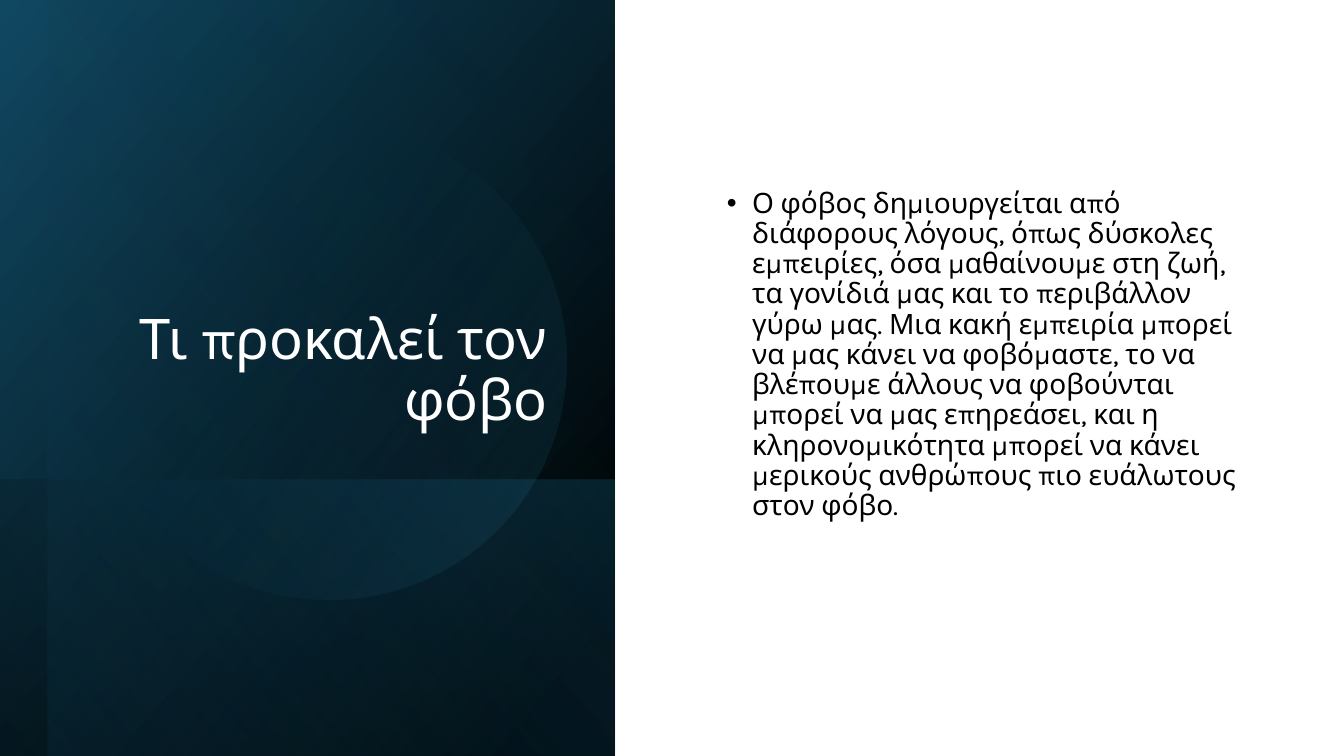
from pptx import Presentation
from pptx.dml.color import RGBColor
from pptx.enum.shapes import MSO_SHAPE
from pptx.enum.text import MSO_ANCHOR, MSO_AUTO_SIZE, PP_ALIGN
from pptx.oxml import parse_xml
from pptx.oxml.ns import nsdecls, qn
from pptx.util import Inches, Pt

RECT, OVAL = MSO_SHAPE.RECTANGLE, MSO_SHAPE.OVAL
TOP, MIDDLE, BOTTOM = MSO_ANCHOR.TOP, MSO_ANCHOR.MIDDLE, MSO_ANCHOR.BOTTOM
LEFT, RIGHT = PP_ALIGN.LEFT, PP_ALIGN.RIGHT
NO_AUTOFIT = MSO_AUTO_SIZE.NONE
FONT = "Karla"

TITLE = "Τι προκαλεί τον φόβο"
BODY = (
    "Ο φόβος δημιουργείται από διάφορους λόγους, όπως δύσκολες εμπειρίες, "
    "όσα μαθαίνουμε στη ζωή, τα γονίδιά μας και το περιβάλλον γύρω μας. "
    "Μια κακή εμπειρία μπορεί να μας κάνει να φοβόμαστε, το να βλέπουμε "
    "άλλους να φοβούνται μπορεί να μας επηρεάσει, και η κληρονομικότητα "
    "μπορεί να κάνει μερικούς ανθρώπους πιο ευάλωτους στον φόβο."
)

# preset, box, rotation, flipped, gradient angle, stops (position %, colour, opacity %)
PANEL = [
    (RECT, (-0.7, 0.7, 7.5, 6.1), 90, True, 50,
     [(8, "000000", 100), (100, "104862", 100)]),
    (RECT, (1.67, 3.08, 2.74, 6.1), 90, True, 130,
     [(2, "156082", 29), (100, "000000", 30)]),
    (RECT, (-0.46, 0.93, 7.5, 5.63), 90, True, 130,
     [(0, "000000", 0), (99, "156082", 11)]),
    (OVAL, (0.9, 1.23, 4.72, 4.72), 101.6, False, 290,
     [(39, "156082", 0), (100, "46B1E1", 15)]),
]

# text, box, anchor, alignment, size, colour
TEXTS = [
    (TITLE, (0.9, 0.64, 4.63, 3.7), BOTTOM, RIGHT, 40, "FFFFFF"),
    (BODY, (7.11, 0.71, 5.32, 5.63), MIDDLE, LEFT, 20, "000000"),
]


def rgb(color):
    return RGBColor.from_string(color)


def set_gradient(shape, angle, stops):
    shape.fill.gradient()
    stop_xml = "".join(
        f'<a:gs pos="{pos * 1000}"><a:srgbClr val="{color}">'
        f'<a:alpha val="{alpha * 1000}"/></a:srgbClr></a:gs>'
        for pos, color, alpha in stops
    )
    gradient = parse_xml(
        f'<a:gradFill {nsdecls("a")} rotWithShape="1"><a:gsLst>{stop_xml}</a:gsLst>'
        f'<a:lin ang="{angle * 60000}" scaled="0"/></a:gradFill>'
    )
    sp_pr = shape.element.spPr
    sp_pr.replace(sp_pr.find(qn("a:gradFill")), gradient)


def add_panel_shape(s, preset, box, rotation, flipped, angle, stops):
    shape = s.shapes.add_shape(preset, *map(Inches, box))
    shape.rotation = rotation
    shape.shadow.inherit = False
    shape.line.fill.background()
    if flipped:
        shape.element.spPr.xfrm.set("flipH", "1")
    set_gradient(shape, angle, stops)


def fill_placeholder(ph, text, box, anchor, align, size, color):
    for name, value in zip(("left", "top", "width", "height"), box):
        setattr(ph, name, Inches(value))
    tf = ph.text_frame
    tf.text = text
    for name, value in {"word_wrap": True, "auto_size": NO_AUTOFIT,
                        "vertical_anchor": anchor}.items():
        setattr(tf, name, value)
    p = tf.paragraphs[0]
    for name, value in {"alignment": align, "line_spacing": 0.9,
                        "space_before": Pt(0)}.items():
        setattr(p, name, value)
    font = p.runs[0].font
    font.name, font.size = FONT, Pt(size)
    font.color.rgb = rgb(color)
    return p


def add_bullet(p):
    p_pr = p._p.get_or_add_pPr()
    p_pr.set("marL", str(Inches(0.25)))
    p_pr.set("indent", str(-Inches(0.25)))
    p_pr.append(parse_xml(f'<a:buFont {nsdecls("a")} typeface="Arial"/>'))
    p_pr.append(parse_xml(f'<a:buChar {nsdecls("a")} char="•"/>'))


def main():
    prs = Presentation()
    prs.slide_width, prs.slide_height = Inches(13.33), Inches(7.5)
    s = prs.slides.add_slide(prs.slide_layouts[1])

    for item in PANEL:
        add_panel_shape(s, *item)

    title, body = s.placeholders
    for ph in (title, body):
        s.shapes.element.append(ph.element)  # bring text in front of the panel
    for ph, item in zip((title, body), TEXTS):
        p = fill_placeholder(ph, *item)
    add_bullet(p)

    prs.save("out.pptx")


if __name__ == "__main__":
    main()
